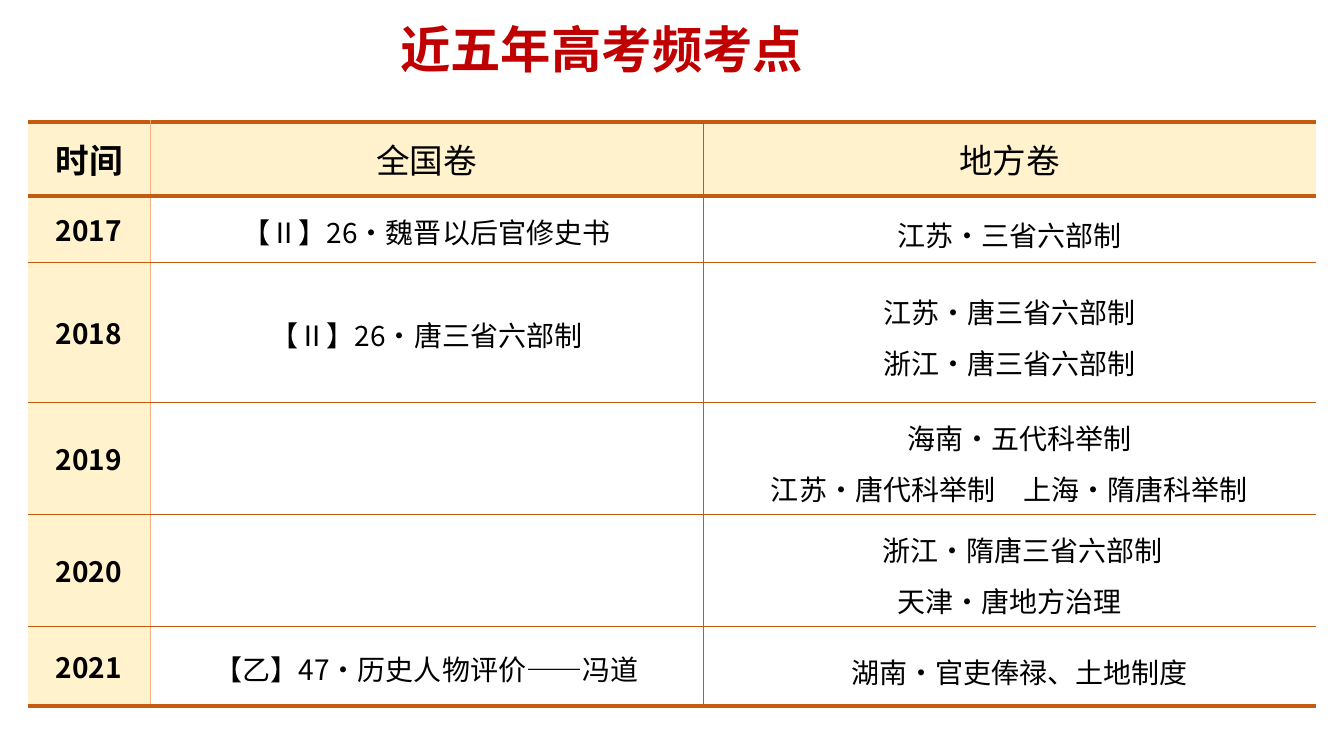
import lxml.etree
import pptx
import pptx.dml.color
import pptx.enum.text
import pptx.oxml.ns
import pptx.util

PX = 914400 / 100.8
FONT = "Noto Sans CJK SC"
COLORS = {"title": "C00000", "text": "000000", "label": "FFF2CC",
          "rule": "C55A11", "divider": "F4B183"}
CENTER = pptx.enum.text.PP_ALIGN.CENTER
MIDDLE = pptx.enum.text.MSO_ANCHOR.MIDDLE
COLUMNS = [122, 553, 613]
HEIGHTS = [74, 66, 140, 112, 112, 80]
HEADINGS = ["时间", "全国卷", "地方卷"]
YEARS = [
    ("2017", "【Ⅱ】26·魏晋以后官修史书", [("江苏·三省六部制", 0)]),
    ("2018", "【Ⅱ】26·唐三省六部制", [("江苏·唐三省六部制", 0), ("浙江·唐三省六部制", 0)]),
    ("2019", "", [("海南·五代科举制", 20), ("江苏·唐代科举制　上海·隋唐科举制", 0)]),
    ("2020", "", [("浙江·隋唐三省六部制", 26), ("天津·唐地方治理", 0)]),
    ("2021", "【乙】47·历史人物评价——冯道", [("湖南·官吏俸禄、土地制度", 20)]),
]


def px(length):
    """Turn pixels into EMU."""
    return pptx.util.Emu(round(length * PX))


def tag(name):
    """Give the full name of a drawing element."""
    return pptx.oxml.ns.qn(name)


def rgb(name):
    """Look up a colour by its role."""
    return pptx.dml.color.RGBColor.from_string(COLORS[name])


def apply(target, values):
    """Set each attribute in a dict of format values."""
    for name, value in values.items():
        setattr(target, name, value)


def write(para, text, size, bold, color="text"):
    """Add one formatted span to a paragraph."""
    span = para.add_run()
    span.text = text
    apply(span.font, {"size": pptx.util.Pt(size), "bold": bold, "name": FONT})
    span.font.color.rgb = rgb(color)
    lxml.etree.SubElement(span.font._element, tag("a:ea"), typeface=FONT)


def add_title(page, box, text):
    """Place and format the title placeholder."""
    title = page.shapes.title
    apply(title, dict(zip(("left", "top", "width", "height"), map(px, box))))
    frame = title.text_frame
    apply(frame, {"word_wrap": False, "vertical_anchor": pptx.enum.text.MSO_ANCHOR.TOP})
    para = frame.paragraphs[0]
    apply(para, {"alignment": pptx.enum.text.PP_ALIGN.LEFT, "line_spacing": 1.0})
    write(para, text, 36, True, "title")


def set_borders(cell, borders):
    """Draw the four sides of a cell, given as colour and width or None."""
    properties = cell._tc.get_or_add_tcPr()
    for index, (side, border) in enumerate(zip("LRTB", borders)):
        line = properties.makeelement(tag("a:ln" + side))
        properties.insert(index, line)
        if border is None:
            lxml.etree.SubElement(line, tag("a:noFill"))
            continue
        color, width = border
        line.set("w", str(pptx.util.Pt(width)))
        fill = lxml.etree.SubElement(line, tag("a:solidFill"))
        lxml.etree.SubElement(fill, tag("a:srgbClr"), val=COLORS[color])


def fill_cell(cell, lines, size, bold, spacing):
    """Write centred lines, each with its left indent, into a cell."""
    cell.vertical_anchor = MIDDLE
    for index, (text, indent) in enumerate(lines):
        frame = cell.text_frame
        para = frame.add_paragraph() if index else frame.paragraphs[0]
        apply(para, {"alignment": CENTER, "line_spacing": spacing})
        if indent:
            para._p.get_or_add_pPr().set("marL", str(px(indent)))
        if text:
            write(para, text, size, bold)


def add_exam_table(page, box, headings, years):
    """Build the table of exam topics by year."""
    rows = [[[(text, 0)] for text in headings]]
    rows += [[[(year, 0)], [(national, 0)], local] for year, national, local in years]
    frame = page.shapes.add_table(len(rows), len(headings), *map(px, box))
    table = frame.table
    apply(table, {"first_row": False, "horz_banding": False})
    for column, width in zip(table.columns, COLUMNS):
        column.width = px(width)
    for row, height in zip(table.rows, HEIGHTS):
        row.height = px(height)
    thick, thin = ("rule", 3), ("rule", 0.25)
    across = [thick, thick] + [thin] * (len(rows) - 2) + [thick]
    down = [None, ("divider", 0.5), thin, None]
    for i, row in enumerate(rows):
        for j, lines in enumerate(row):
            cell = table.cell(i, j)
            spacing = 1.0 if i == 0 else (1.0, 1.1, 1.25)[j]
            fill_cell(cell, lines, 20 if i else 24, j == 0, spacing)
            if i == 0 or j == 0:
                cell.fill.solid()
                cell.fill.fore_color.rgb = rgb("label")
            else:
                cell.fill.background()
            set_borders(cell, (down[j], down[j + 1], across[i], across[i + 1]))


def main():
    """Build and save the deck."""
    deck = pptx.Presentation()
    apply(deck, {"slide_width": px(1344), "slide_height": px(756)})
    page = deck.slides.add_slide(deck.slide_layouts[5])
    add_title(page, (390, 13, 446, 70), "近五年高考频考点")
    add_exam_table(page, (28, 122, sum(COLUMNS), sum(HEIGHTS)), HEADINGS, YEARS)
    deck.save("out.pptx")


if __name__ == "__main__":
    main()
